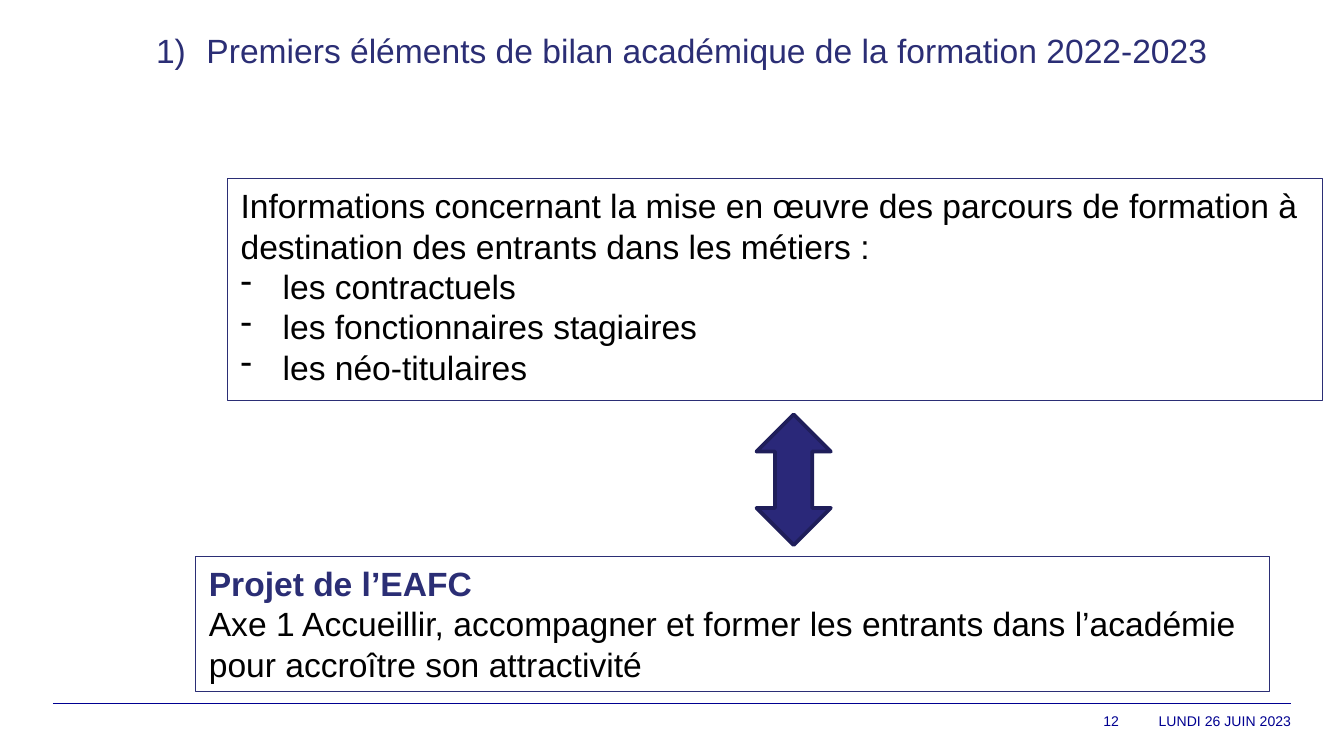
import pptx
import pptx.util
import pptx.dml.color
import pptx.enum.shapes
import pptx.enum.text
import pptx.oxml.ns
import lxml.etree

Pt = pptx.util.Pt
Align = pptx.enum.text.PP_ALIGN
Anchor = pptx.enum.text.MSO_ANCHOR
Fit = pptx.enum.text.MSO_AUTO_SIZE
Kind = pptx.enum.shapes.MSO_SHAPE
qn = pptx.oxml.ns.qn


class Theme:
    font = "Arial"
    navy = "2B2E75"
    blue = "000091"
    black = "000000"
    arrow = "2A2879"
    edge = "1F1E5A"
    body = 18
    small = 7.5


def color(code):
    return pptx.dml.color.RGBColor.from_string(code)


class Page:
    def __init__(self, deck, theme):
        self.theme = theme
        self.slide = deck.slides.add_slide(deck.slide_layouts[5])
        self.shapes = self.slide.shapes

    def style(self, par, size, tint, bold=False, align=Align.LEFT):
        par.alignment = align
        for run in par.runs:
            font = run.font
            font.name, font.size, font.bold = self.theme.font, Pt(size), bold
            font.color.rgb = color(tint)

    def bullet(self, par, indent, tag, **attrs):
        props = par._p.get_or_add_pPr()
        props.set("marL", str(Pt(indent)))
        props.set("indent", str(-Pt(indent)))
        lxml.etree.SubElement(props, qn("a:" + tag), attrs)

    def title(self, text, left, top, width, height):
        head = self.shapes.title
        head.left, head.top = Pt(left), Pt(top)
        head.width, head.height = Pt(width), Pt(height)
        frame = head.text_frame
        frame.text = text
        frame.word_wrap = True
        frame.auto_size = Fit.NONE
        frame.vertical_anchor = Anchor.TOP
        par = frame.paragraphs[0]
        self.bullet(par, 27, "buAutoNum", type="arabicParenR")
        self.style(par, self.theme.body, self.theme.navy)

    def shape(self, kind, left, top, width, height, line, weight, fill=None):
        item = self.shapes.add_shape(kind, Pt(left), Pt(top), Pt(width), Pt(height))
        item.shadow.inherit = False
        if fill:
            item.fill.solid()
            item.fill.fore_color.rgb = color(fill)
        else:
            item.fill.background()
        item.line.color.rgb = color(line)
        item.line.width = Pt(weight)
        return item

    def box(self, left, top, width, height, rows):
        """Each row is (text, colour, bold, dashed)."""
        item = self.shape(Kind.RECTANGLE, left, top, width, height, self.theme.navy, 0.75)
        frame = item.text_frame
        frame.text = "\n".join(row[0] for row in rows)
        frame.word_wrap = True
        frame.vertical_anchor = Anchor.TOP
        for par, (_, tint, bold, dashed) in zip(frame.paragraphs, rows):
            if dashed:
                self.bullet(par, 22.5, "buChar", char="-")
            self.style(par, self.theme.body, tint, bold)

    def arrow(self, left, top, width, height):
        item = self.shape(Kind.UP_DOWN_ARROW, left, top, width, height,
                          self.theme.edge, 2, self.theme.arrow)
        lxml.etree.SubElement(item.line._get_or_add_ln(), qn("a:round"))

    def rule(self, left, right, top):
        line = self.shapes.add_connector(
            pptx.enum.shapes.MSO_CONNECTOR.STRAIGHT, Pt(left), Pt(top), Pt(right), Pt(top))
        line.line.color.rgb = color(self.theme.blue)
        line.line.width = Pt(0.8)
        lxml.etree.SubElement(line._element.spPr, qn("a:effectLst"))

    def note(self, text, left, top, width, height):
        frame = self.shapes.add_textbox(Pt(left), Pt(top), Pt(width), Pt(height)).text_frame
        frame.text = text
        frame.word_wrap = True
        frame.vertical_anchor = Anchor.MIDDLE
        frame.margin_left = frame.margin_right = frame.margin_top = frame.margin_bottom = 0
        self.style(frame.paragraphs[0], self.theme.small, self.theme.blue, align=Align.RIGHT)


def main():
    deck = pptx.Presentation()
    deck.slide_width, deck.slide_height = Pt(720), Pt(405)
    theme = Theme()
    page = Page(deck, theme)

    # Footer
    page.rule(28.35, 691.65, 376.8)
    page.note("LUNDI 26 JUIN 2023", 599.5, 376.8, 92.15, 18.5)
    page.note("12", 493, 376.8, 106.5, 18.5)

    # Title
    page.title("Premiers éléments de bilan académique de la formation 2022-2023",
               76.4, 12.6, 584, 29)

    # Training paths
    intro = ("Informations concernant la mise en œuvre des parcours de formation à "
             "destination des entrants dans les métiers :")
    groups = ["les contractuels", "les fonctionnaires stagiaires", "les néo-titulaires"]
    page.box(121.8, 95.7, 586.8, 119,
             [(intro, theme.black, False, False)]
             + [(group, theme.black, False, True) for group in groups])

    # Project goal
    goal = ("Axe 1 Accueillir, accompagner et former les entrants dans l’académie "
            "pour accroître son attractivité")
    page.box(104.8, 298, 575.3, 72.6,
             [("Projet de l’EAFC", theme.navy, True, False),
              (goal, theme.black, False, False)])

    # Link between the two boxes
    page.arrow(405.3, 222, 39.8, 70)

    deck.save("out.pptx")


if __name__ == "__main__":
    main()
